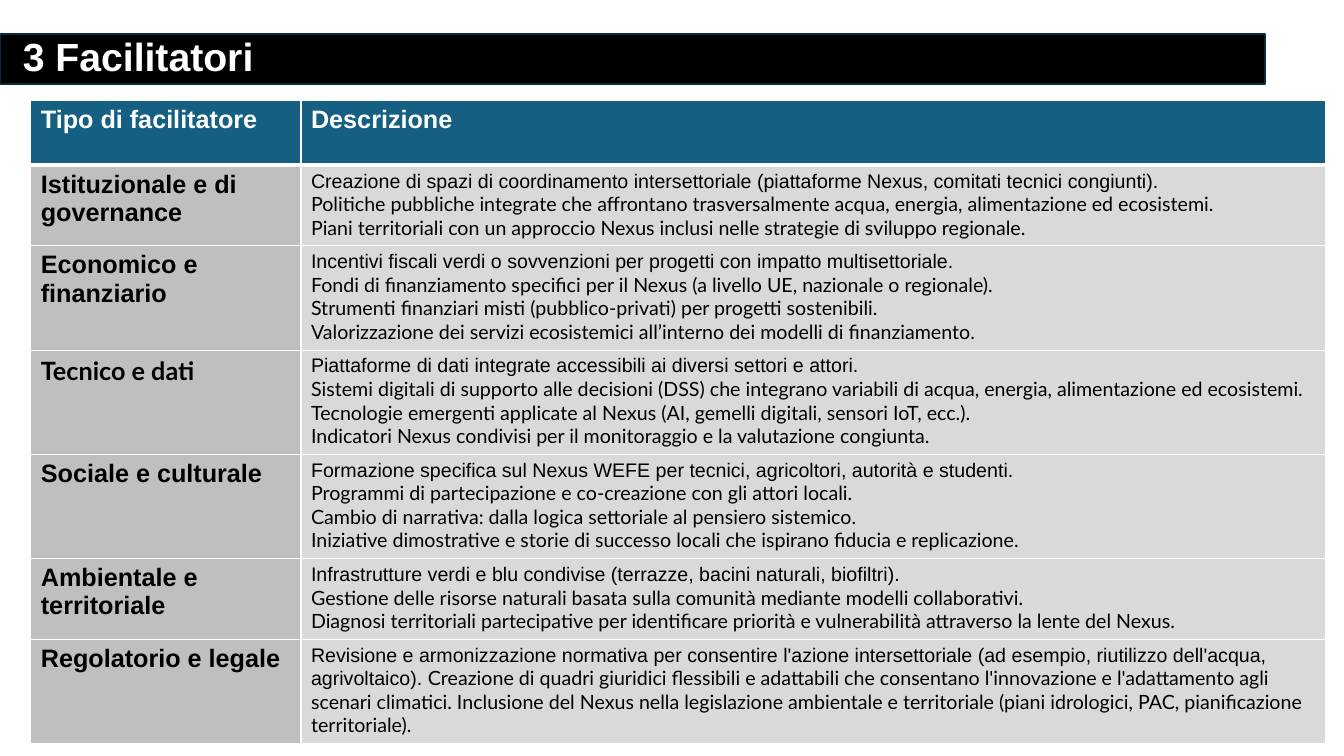
from lxml import etree
from pptx import Presentation
from pptx.dml.color import RGBColor
from pptx.enum.shapes import MSO_SHAPE
from pptx.enum.text import MSO_ANCHOR
from pptx.oxml.ns import qn
from pptx.util import Pt

RECTANGLE = MSO_SHAPE.RECTANGLE
MIDDLE = MSO_ANCHOR.MIDDLE

# Content: each description line is a list of runs; the first run is Arial, the rest Lato
TITLE = "3 Facilitatori"
HEADINGS = ("Tipo di facilitatore", "Descrizione")
FACILITATORS = [
    ("Istituzionale e di governance", "Arial", [
        ["Creazione di spazi di coordinamento intersettoriale (piattaforme Nexus, comitati tecnici congiunti)."],
        ["Politiche pubbliche integrate che affrontano trasversalmente acqua, energia, alimentazione ed ecosistemi."],
        ["Piani territoriali con un approccio Nexus inclusi nelle strategie di sviluppo regionale."],
    ]),
    ("Economico e finanziario", "Arial", [
        ["Incentivi fiscali verdi o sovvenzioni per progetti con impatto multisettoriale."],
        ["Fondi di finanziamento specifici per il Nexus (a livello UE, nazionale o regionale)."],
        ["Strumenti finanziari misti (pubblico-privati) per progetti sostenibili."],
        ["Valorizzazione dei servizi ecosistemici all’interno dei modelli di finanziamento."],
    ]),
    ("Tecnico e dati", "Lato", [
        ["Piattaforme di dati integrate accessibili ai diversi settori e attori."],
        ["Sistemi digitali di supporto alle decisioni (DSS) che integrano variabili di acqua, energia, "
         "alimentazione ed ecosistemi."],
        ["Tecnologie emergenti applicate al Nexus (AI, gemelli digitali, sensori IoT, ecc.)."],
        ["Indicatori Nexus condivisi per il monitoraggio e la valutazione congiunta."],
    ]),
    ("Sociale e culturale", "Arial", [
        ["Formazione specifica sul Nexus WEFE per tecnici, agricoltori, autorità e studenti."],
        ["Programmi di partecipazione e co-creazione con gli attori locali."],
        ["Cambio di narrativa: dalla logica settoriale al pensiero sistemico."],
        ["Iniziative dimostrative e storie di successo locali che ispirano fiducia e replicazione."],
    ]),
    ("Ambientale e territoriale", "Arial", [
        ["Infrastrutture verdi e blu condivise (terrazze, bacini naturali, biofiltri)."],
        ["Gestione delle risorse naturali basata sulla comunità mediante modelli collaborativi."],
        ["Diagnosi territoriali partecipative per identificare priorità e vulnerabilità attraverso la lente del Nexus."],
    ]),
    ("Regolatorio e legale", "Arial", [
        ["Revisione e armonizzazione normativa per consentire l'azione intersettoriale (ad esempio, riutilizzo "
         "dell'acqua, agrivoltaico). ",
         "Creazione di quadri giuridici flessibili e adattabili che consentano l'innovazione e l'adattamento agli "
         "scenari climatici. Inclusione del Nexus nella legislazione ambientale e territoriale (piani idrologici, "
         "PAC, pianificazione territoriale)."],
    ]),
]

# Layout and colours
COLUMN_WIDTHS = (193, 732)
ROW_HEIGHT = 46
BLACK, WHITE = "000000", "FFFFFF"
HEADER_FILL, TYPE_FILL, DESCRIPTION_FILL = "156082", "BFBFBF", "D9D9D9"


def rgb(value):
    return RGBColor.from_string(value)


def style(run, size, font="Arial", color=BLACK, bold=False):
    run.font.size = Pt(size)
    run.font.name = font
    run.font.bold = bold
    run.font.color.rgb = rgb(color)


def set_borders(cell, widths):
    properties = cell._tc.get_or_add_tcPr()
    for position, (side, width) in enumerate(widths.items()):
        line = etree.Element(qn("a:ln" + side), w=str(Pt(width)))
        fill = etree.SubElement(line, qn("a:solidFill"))
        etree.SubElement(fill, qn("a:srgbClr"), val=WHITE)
        properties.insert(position, line)


def fill_cell(cell, lines, fill, size, fonts, color=BLACK, bold=False):
    cell.fill.solid()
    cell.fill.fore_color.rgb = rgb(fill)
    frame = cell.text_frame
    for number, texts in enumerate(lines):
        paragraph = frame.add_paragraph() if number else frame.paragraphs[0]
        for position, text in enumerate(texts):
            run = paragraph.add_run()
            run.text = text
            font = fonts[0] if number + position == 0 else fonts[-1]
            style(run, size, font, color, bold)


prs = Presentation()
prs.slide_width, prs.slide_height = Pt(960), Pt(540)
slide = prs.slides.add_slide(prs.slide_layouts[6])

# Title band
band = slide.shapes.add_shape(RECTANGLE, Pt(0), Pt(24.5), Pt(903.6), Pt(35.5))
band.shadow.inherit = False
band.fill.solid()
band.fill.fore_color.rgb = rgb(BLACK)
band.line.color.rgb = rgb("092A39")
band.line.width = Pt(1.5)

title = slide.shapes.add_textbox(Pt(9.2), Pt(17.3), Pt(722), Pt(49.7)).text_frame
title.word_wrap = True
title.vertical_anchor = MIDDLE
title.text = TITLE
title.paragraphs[0].line_spacing = 0.9
style(title.paragraphs[0].runs[0], 28, color=WHITE, bold=True)

# Table of facilitators
row_count = len(FACILITATORS) + 1
table = slide.shapes.add_table(row_count, len(COLUMN_WIDTHS), Pt(22), Pt(72),
                               Pt(sum(COLUMN_WIDTHS)), Pt(ROW_HEIGHT * row_count)).table
for column, width in zip(table.columns, COLUMN_WIDTHS):
    column.width = Pt(width)
for row in table.rows:
    row.height = Pt(ROW_HEIGHT)

for index, heading in enumerate(HEADINGS):
    cell = table.cell(0, index)
    fill_cell(cell, [[heading]], HEADER_FILL, 18, ["Arial"], WHITE, True)
    set_borders(cell, {"L": 1, "R": 1, "T": 1, "B": 3})

for index, (kind, kind_font, description) in enumerate(FACILITATORS, start=1):
    kind_cell, description_cell = table.cell(index, 0), table.cell(index, 1)
    fill_cell(kind_cell, [[kind]], TYPE_FILL, 18, [kind_font], bold=True)
    fill_cell(description_cell, description, DESCRIPTION_FILL, 14, ["Arial", "Lato"])
    for cell in (kind_cell, description_cell):
        set_borders(cell, {"L": 1, "R": 1, "B": 1})

prs.save("out.pptx")
